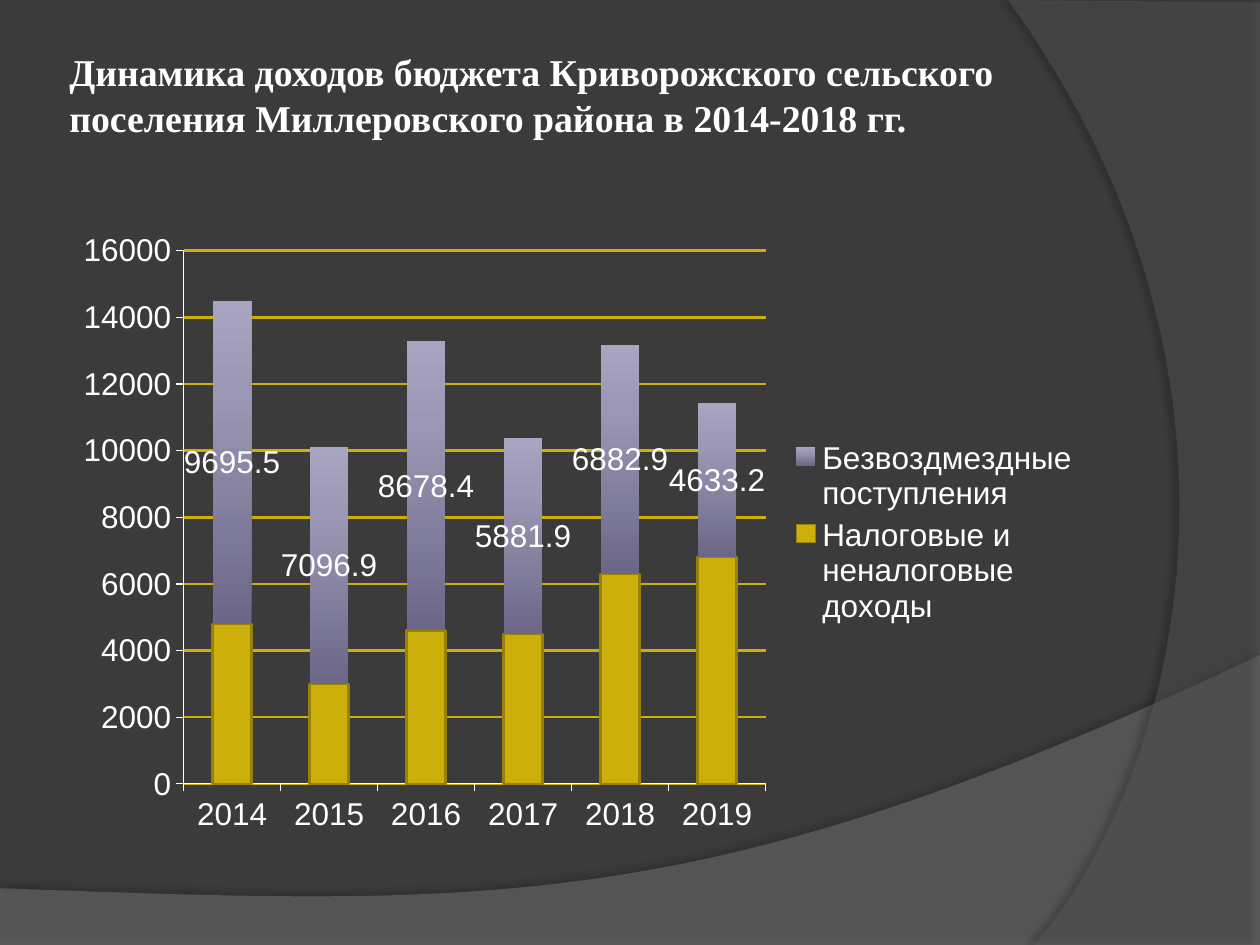
from copy import deepcopy
from dataclasses import dataclass

from lxml import etree
from pptx import Presentation
from pptx.chart.data import CategoryChartData
from pptx.dml.color import RGBColor
from pptx.enum import chart as charts, text
from pptx.oxml.ns import qn
from pptx.util import Pt


@dataclass(frozen=True)
class Theme:
    background: str = "3B3B3B"
    wave: str = "7F7F7F"
    arc: str = "5E5E5E"
    shadow: str = "000000"
    ink: str = "FFFFFF"
    gold: str = "CCAF0A"
    gold_edge: str = "978107"
    violet: tuple = ((0, "6C6787"), (0.72, "9B97B4"), (1, "A9A5C0"))
    title_font: str = "Times New Roman"
    chart_font: str = "Arial"
    title_size: float = 21.6
    chart_size: float = 18


theme = Theme()


def curve(start, control_1, control_2, end, steps=48):
    points = []
    for step in range(steps + 1):
        t = step / steps
        weights = ((1 - t) ** 3, 3 * t * (1 - t) ** 2, 3 * t * t * (1 - t), t ** 3)
        corners = (start, control_1, control_2, end)
        points.append(tuple(sum(w * c[axis] for w, c in zip(weights, corners)) for axis in (0, 1)))
    return points


def add_backdrop(page, points, color, opacity, shadow_opacity, distance, direction):
    outline = [(Pt(x), Pt(y)) for x, y in points]
    builder = page.shapes.build_freeform(*outline[0], scale=1.0)
    builder.add_line_segments(outline[1:], close=True)
    shape = builder.convert_to_shape()
    shape.shadow.inherit = False
    shape.line.fill.background()
    shape.fill.solid()
    shape.fill.fore_color.rgb = RGBColor.from_string(color)
    properties = shape._element.spPr
    fill_color = properties.find(qn("a:solidFill")).find(qn("a:srgbClr"))
    etree.SubElement(fill_color, qn("a:alpha"), val=str(opacity * 1000))
    shadow = etree.SubElement(
        properties.find(qn("a:effectLst")), qn("a:outerShdw"),
        blurRad=str(Pt(4)), dist=str(Pt(distance)), dir=str(direction * 60000),
        algn="ctr", rotWithShape="0")
    shadow_color = etree.SubElement(shadow, qn("a:srgbClr"), val=theme.shadow)
    etree.SubElement(shadow_color, qn("a:alpha"), val=str(shadow_opacity * 1000))


deck = Presentation()
deck.slide_width, deck.slide_height = Pt(720), Pt(540)
page = deck.slides.add_slide(deck.slide_layouts[5])
page.background.fill.solid()
page.background.fill.fore_color.rgb = RGBColor.from_string(theme.background)

wave = [(0, 540), (720, 540)] + curve((720, 374.4), (402.5, 524.9), (281.5, 517.7), (0, 507.6))
arc = [(720, 1.4), (720, 540)] + curve((591.1, 540), (673.2, 445.7), (733, 216), (576, 0))
add_backdrop(page, wave, theme.wave, 45, 35, 3.5, 270)
add_backdrop(page, arc, theme.arc, 40, 45, 4, 180)

title = page.shapes.title
page.shapes._spTree.append(title._element)
title.left, title.top, title.width, title.height = Pt(36), Pt(21.6), Pt(588.24), Pt(90)
frame = title.text_frame
frame.text = "Динамика доходов бюджета Криворожского сельского поселения Миллеровского района в 2014-2018 гг."
frame.word_wrap = True
frame.auto_size = text.MSO_AUTO_SIZE.NONE
frame.vertical_anchor = text.MSO_ANCHOR.MIDDLE
frame.margin_left = frame.margin_right = frame.margin_top = Pt(3.6)
frame.margin_bottom = Pt(29)
para = frame.paragraphs[0]
para.alignment = text.PP_ALIGN.LEFT
font = para.runs[0].font
font.name, font.size, font.bold = theme.title_font, Pt(theme.title_size), True
font.color.rgb = RGBColor.from_string(theme.ink)

data = CategoryChartData()
data.categories = ["2014", "2015", "2016", "2017", "2018", "2019"]
data.add_series("Налоговые и неналоговые доходы", (4800, 3000, 4600, 4500, 6300, 6800))
data.add_series("Безвоздмездные поступления", (9695.5, 7096.9, 8678.4, 5881.9, 6882.9, 4633.2))
chart = page.shapes.add_chart(
    charts.XL_CHART_TYPE.COLUMN_STACKED, Pt(36), Pt(126), Pt(588.24), Pt(356.4), data).chart
chart.has_title = False
chart.font.name, chart.font.size = theme.chart_font, Pt(theme.chart_size)
chart.font.color.rgb = RGBColor.from_string(theme.ink)
chart.has_legend = True
chart.legend.position = charts.XL_LEGEND_POSITION.RIGHT
chart.legend.include_in_layout = False

for axis in (chart.category_axis, chart.value_axis):
    axis.major_tick_mark = charts.XL_TICK_MARK.OUTSIDE
    axis.format.line.color.rgb = RGBColor.from_string(theme.ink)
    axis.format.line.width = Pt(0.75)
scale = chart.value_axis
scale.minimum_scale, scale.maximum_scale, scale.major_unit = 0, 16000, 2000
scale.has_major_gridlines = True
grid = scale.major_gridlines.format.line
grid.color.rgb = RGBColor.from_string(theme.gold)
grid.width = Pt(1.5)

plot = chart.plots[0]
plot.gap_width, plot.overlap, plot.vary_by_categories = 150, 100, False
taxes, transfers = plot.series
taxes.format.fill.solid()
taxes.format.fill.fore_color.rgb = RGBColor.from_string(theme.gold)
taxes.format.line.color.rgb = RGBColor.from_string(theme.gold_edge)
taxes.format.line.width = Pt(1.5)

fill = transfers.format.fill
fill.gradient()
fill.gradient_angle = 90
stop_list = transfers._element.xpath(".//a:gsLst")[0]
stop_list.append(deepcopy(stop_list[-1]))
for stop, (position, color) in zip(fill.gradient_stops, theme.violet):
    stop.position = position
    stop.color.rgb = RGBColor.from_string(color)
transfers.format.line.fill.background()
labels = transfers.data_labels
labels.show_value = True
labels.position = charts.XL_LABEL_POSITION.CENTER
labels.font.name, labels.font.size = theme.chart_font, Pt(theme.chart_size)
labels.font.color.rgb = RGBColor.from_string(theme.ink)

deck.save("out.pptx")
